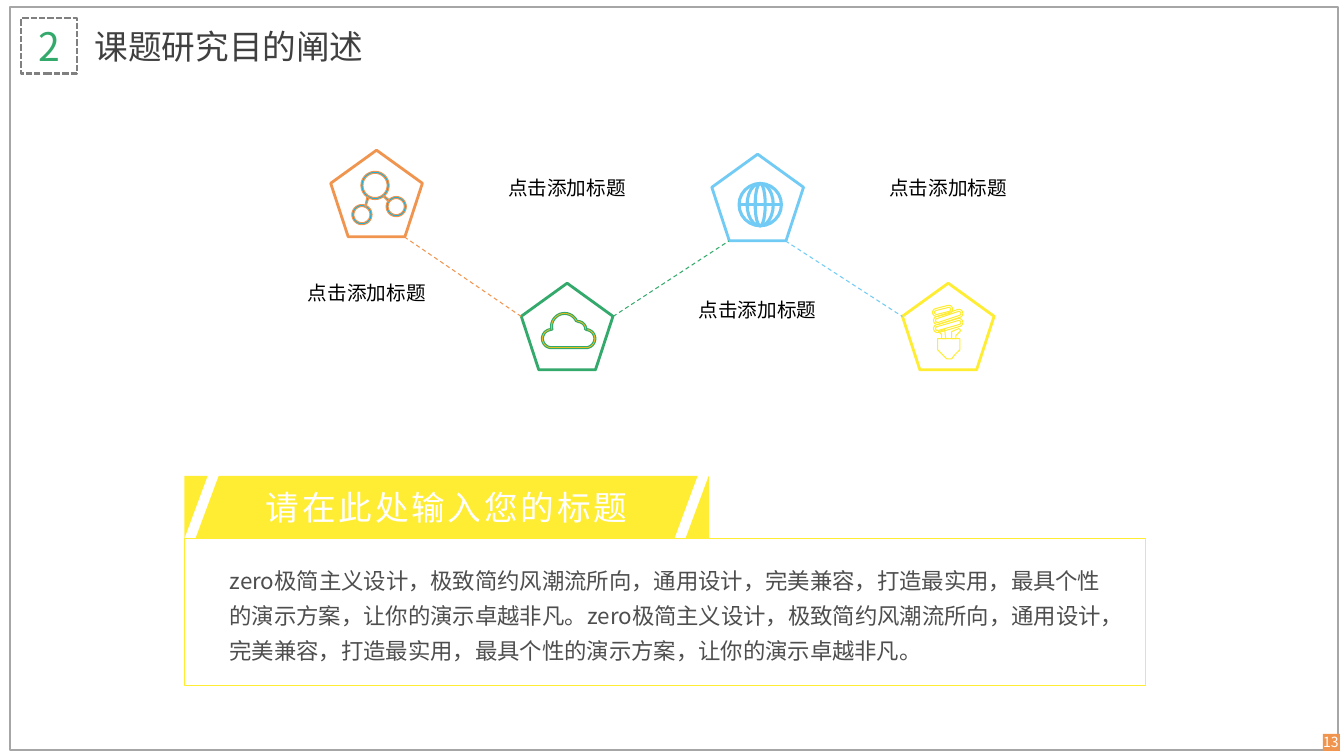
from dataclasses import dataclass
from math import atan2, cos, degrees, radians, sin
from typing import NamedTuple

from pptx import Presentation
from pptx.dml.color import RGBColor
from pptx.enum.dml import MSO_LINE_DASH_STYLE as Dash
from pptx.enum.shapes import MSO_CONNECTOR, MSO_SHAPE as Shape
from pptx.enum.text import MSO_ANCHOR as Anchor, PP_ALIGN as Align
from pptx.oxml.ns import qn
from pptx.util import Inches, Pt


@dataclass(frozen=True)
class Theme:
    font: str = "Noto Sans CJK SC"
    label_font: str = "Arial"
    orange: str = "F0954F"
    green: str = "33AA6C"
    blue: str = "71CBF4"
    yellow: str = "FFED33"
    molecule: str = "00B4ED"
    cloud: str = "FFBF17"
    frame: str = "A6A6A6"
    dashes: str = "808080"
    title: str = "404040"
    body: str = "4E4E4E"
    black: str = "000000"
    white: str = "FFFFFF"
    number_size: int = 28
    title_size: int = 24
    body_size: int = 16
    label_size: int = 14
    page_size: int = 10


THEME = Theme()


class Box(NamedTuple):
    left: float
    top: float
    width: float
    height: float

    def lengths(self):
        return [Inches(value) for value in self]


def paint(shape, fill=None, line=None, weight=1, dash=None):
    shape.shadow.inherit = False
    if fill:
        shape.fill.solid()
        shape.fill.fore_color.rgb = RGBColor.from_string(fill)
    else:
        shape.fill.background()
    if line:
        shape.line.color.rgb = RGBColor.from_string(line)
        shape.line.width = Pt(weight)
        if dash:
            shape.line.dash_style = dash
    else:
        shape.line.fill.background()
    return shape


def add_box(page, kind, box, **style):
    return paint(page.shapes.add_shape(kind, *box.lengths()), **style)


def write(shape, text, size, color, font=THEME.font, align=Align.LEFT,
          anchor=Anchor.MIDDLE, inset=None, line_spacing=None, space=0, tracking=0):
    frame = shape.text_frame
    frame.word_wrap = True
    frame.vertical_anchor = anchor
    if inset is not None:
        frame.margin_left = frame.margin_right = Inches(inset)
        frame.margin_top = frame.margin_bottom = Inches(inset)
    para = frame.paragraphs[0]
    para.alignment = align
    para.line_spacing = line_spacing
    para.space_before = para.space_after = Pt(space)
    span = para.add_run()
    span.text = text
    span.font.size = Pt(size)
    span.font.name = font
    span.font.color.rgb = RGBColor.from_string(color)
    properties = span.font._element
    properties.get_or_add_latin().addnext(
        properties.makeelement(qn("a:ea"), {"typeface": THEME.font}))
    if tracking:
        properties.set("spc", str(tracking * 100))


def add_text(page, box, text, size, color, **style):
    write(page.shapes.add_textbox(*box.lengths()), text, size, color, **style)


def add_outline(page, box, contours, **style):
    """Draw closed contours, given in inches from the box's corner, as one shape."""
    builder = None
    for contour in contours:
        points = [(Inches(box.left + x), Inches(box.top + y)) for x, y in contour]
        if builder is None:
            builder = page.shapes.build_freeform(*points[0])
        else:
            builder.move_to(*points[0])
        builder.add_line_segments(points[1:], close=True)
    return paint(builder.convert_to_shape(), **style)


def arc(center, radius, start, end):
    steps = 16
    angles = [radians(start + (end - start) * step / steps) for step in range(steps + 1)]
    return [(center[0] + radius * cos(a), center[1] + radius * sin(a)) for a in angles]


def capsule(start, end, radius):
    """Outline of a round-ended bar; a circle when both ends agree."""
    turn = degrees(atan2(end[1] - start[1], end[0] - start[0]))
    return (arc(end, radius, turn - 90, turn + 90)
            + arc(start, radius, turn + 90, turn + 270))


def molecule_icon(page, box):
    atoms = [((0.44, 0.35), 0.14), ((0.31, 0.64), 0.1), ((0.65, 0.56), 0.1)]
    contours = [capsule(center, center, radius - wall)
                for center, radius in atoms for wall in (0, 0.02)]
    contours += [[(0.36, 0.46), (0.38, 0.47), (0.35, 0.56), (0.34, 0.55)],
                 [(0.53, 0.45), (0.58, 0.49), (0.57, 0.51), (0.52, 0.46)]]
    add_outline(page, box, contours, fill=THEME.molecule, line=THEME.orange, weight=0.75)


def cloud_icon(page, box):
    lobes = [((0.3, 0.55), 0.1, 90, 265), ((0.43, 0.43), 0.14, 165, 335),
             ((0.56, 0.46), 0.09, 275, 360), ((0.64, 0.55), 0.1, 275, 450)]
    contours = [[point for center, radius, start, end in lobes
                 for point in arc(center, radius - wall, start, end)]
                for wall in (0, 0.02)]
    add_outline(page, box, contours, fill=THEME.cloud, line=THEME.green, weight=0.75)


def globe_icon(page, box):
    x, y, radius = 0.48, 0.5, 0.21
    for half in (radius, 0.13, 0.05):
        meridian = Box(box.left + x - half, box.top + y - radius, 2 * half, 2 * radius)
        add_box(page, Shape.OVAL, meridian, line=THEME.blue, weight=2.2)
    middle = box.top + y
    add_line(page, (box.left + x - radius, middle), (box.left + x + radius, middle),
             THEME.blue, 2.2)


def bulb_icon(page, box):
    coils = [((0.34, 0.29), (0.46, 0.26)), ((0.35, 0.37), (0.56, 0.3)),
             ((0.35, 0.45), (0.56, 0.39))]
    contours = [capsule(*coil, radius) for coil in coils for radius in (0.04, 0.02)]
    contours += [
        [(0.39, 0.55), (0.39, 0.51), (0.36, 0.48), (0.42, 0.46), (0.43, 0.55)],
        [(0.49, 0.55), (0.49, 0.48), (0.56, 0.45), (0.58, 0.47), (0.53, 0.52), (0.53, 0.55)],
        [(0.35, 0.55), (0.57, 0.55), (0.57, 0.66), (0.52, 0.71), (0.49, 0.75),
         (0.44, 0.75), (0.4, 0.71), (0.35, 0.66)]]
    add_outline(page, box, contours, line=THEME.yellow, weight=0.75)


def add_line(page, start, end, color, weight, dash=None):
    line = page.shapes.add_connector(
        MSO_CONNECTOR.STRAIGHT, *(Inches(value) for value in (*start, *end)))
    line.line.color.rgb = RGBColor.from_string(color)
    line.line.width = Pt(weight)
    if dash:
        line.line.dash_style = dash
    properties = line._element.spPr
    properties.append(properties.makeelement(qn("a:effectLst"), {}))


def draw_frame(page, box):
    add_box(page, Shape.RECTANGLE, box, line=THEME.frame)
    corner = Box(box.left + 13.02, box.top + 7.21, 0.17, 0.17)
    add_box(page, Shape.RECTANGLE, corner, fill=THEME.orange)
    add_text(page, Box(corner.left - 0.14, corner.top, 0.44, 0.17), "13",
             THEME.page_size, THEME.white, align=Align.CENTER)


def draw_heading(page, box):
    badge = add_box(page, Shape.RECTANGLE, Box(box.left, box.top, box.height, box.height),
                    line=THEME.dashes, weight=1.5, dash=Dash.SQUARE_DOT)
    write(badge, "2", THEME.number_size, THEME.green, align=Align.CENTER, inset=0)
    add_text(page, Box(box.left + 0.63, box.top, box.width - 0.63, box.height),
             "课题研究目的阐述", THEME.title_size, THEME.title)


def draw_zigzag(page, box):
    """Four pentagons, alternately high and low, joined by dashed lines."""
    stops = [(0, THEME.orange, molecule_icon, (-0.61, 1.25, 1.94)),
             (1.32, THEME.green, cloud_icon, (-0.61, 0.21, 2.13)),
             (0.04, THEME.blue, globe_icon, (-0.61, 1.42, 2.13)),
             (1.32, THEME.yellow, bulb_icon, (-0.61, 0.21, 2.13))]
    pitch = (box.width - 0.91) / (len(stops) - 1)
    places = [Box(box.left + index * pitch, box.top + stop[0], 0.91, 0.86)
              for index, stop in enumerate(stops)]
    for place, (_, color, draw_icon, (shift, drop, width)) in zip(places, stops):
        add_box(page, Shape.REGULAR_PENTAGON, place, line=color, weight=2)
        draw_icon(page, place)
        add_text(page, Box(place.left + shift, box.top + drop, width, 0.34),
                 "点击添加标题", THEME.label_size, THEME.black, font=THEME.label_font,
                 align=Align.CENTER, anchor=Anchor.TOP)
    for here, after, stop in zip(places, places[1:], stops):
        if here.top < after.top:
            start = here.left + 0.73, here.top + here.height
            end = after.left, after.top + 0.33
        else:
            start = here.left + here.width, here.top + 0.33
            end = after.left + 0.17, after.top + after.height
        add_line(page, start, end, stop[1], 0.75, Dash.DASH)


def draw_summary(page, box):
    width, height, slant, gap = 5.2, 0.62, 0.23, 0.11
    contours = [
        [(0, 0), (slant, 0), (0, height)],
        [(slant + gap, 0), (width - gap, 0), (width - gap - slant, height), (gap, height)],
        [(width, 0), (width, height), (width - slant, height)]]
    banner = add_outline(page, box, contours, fill=THEME.yellow)
    write(banner, "请在此处输入您的标题", THEME.title_size, THEME.white,
          align=Align.CENTER, tracking=2)
    panel = Box(box.left, box.top + height, box.width, box.height - height)
    add_box(page, Shape.RECTANGLE, panel, line=THEME.yellow)
    sentence = ("zero极简主义设计，极致简约风潮流所向，通用设计，完美兼容，"
                "打造最实用，最具个性的演示方案，让你的演示卓越非凡。")
    add_text(page, Box(panel.left + 0.35, panel.top + 0.18, 8.96, 1.1), sentence * 2,
             THEME.body_size, THEME.body, line_spacing=1.3, space=6)


def main():
    deck = Presentation()
    deck.slide_width, deck.slide_height = Inches(13.33), Inches(7.5)
    page = deck.slides.add_slide(deck.slide_layouts[6])
    draw_frame(page, Box(0.1, 0.07, 13.17, 7.37))
    draw_heading(page, Box(0.21, 0.18, 4.22, 0.55))
    draw_zigzag(page, Box(3.28, 1.49, 6.58, 2.18))
    draw_summary(page, Box(1.83, 4.72, 9.53, 2.08))
    deck.save("out.pptx")


if __name__ == "__main__":
    main()
